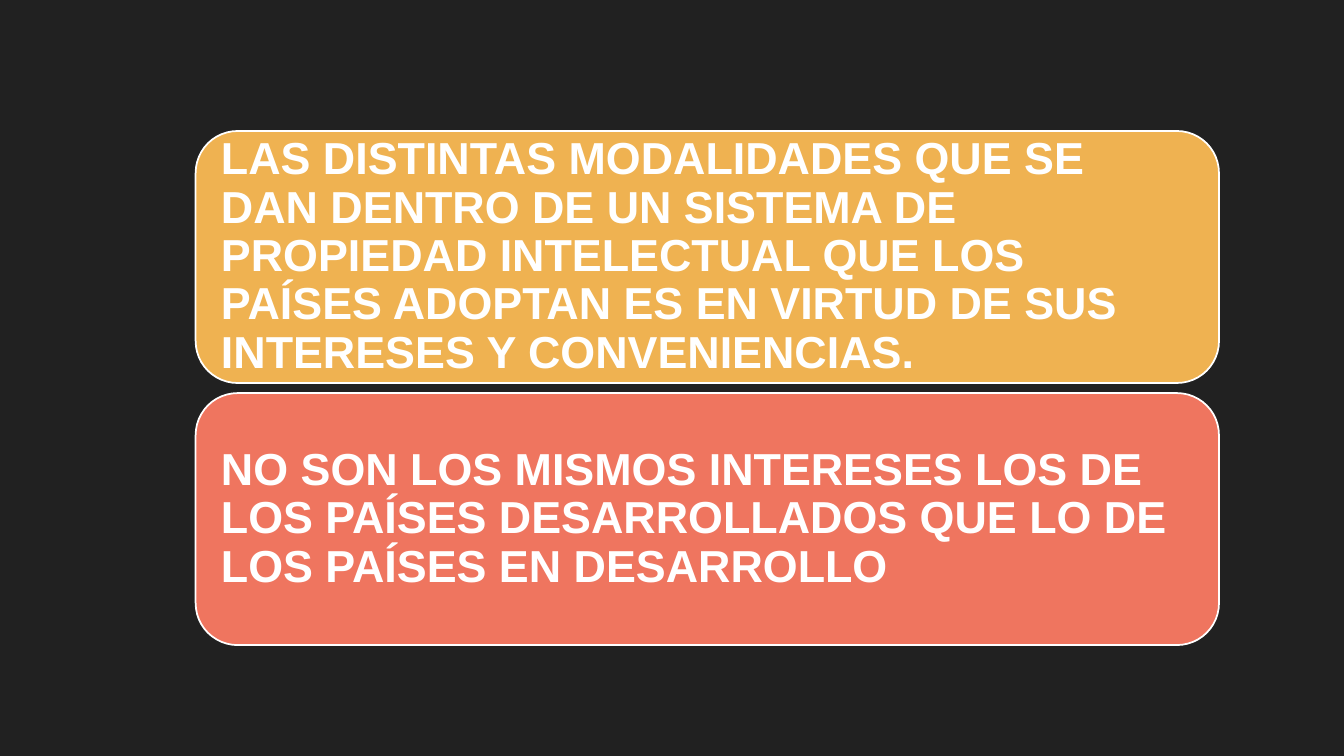
from pptx import Presentation
from pptx.dml.color import RGBColor
from pptx.enum.shapes import MSO_SHAPE
from pptx.enum.text import MSO_ANCHOR, PP_ALIGN
from pptx.util import Inches, Pt

ROUNDED = MSO_SHAPE.ROUNDED_RECTANGLE
MIDDLE = MSO_ANCHOR.MIDDLE
LEFT = PP_ALIGN.LEFT

BACKGROUND = "212121"
WHITE = "FFFFFF"
CARD_LEFT, CARD_TOP = 1.94, 1.3
CARD_WIDTH, CARD_HEIGHT = 10.15, 2.5
CARD_GAP = 0.1
CARD_INSET = Inches(0.13)

CARDS = [
    ("EFB251", "LAS DISTINTAS MODALIDADES QUE SE DAN DENTRO DE UN SISTEMA DE "
               "PROPIEDAD INTELECTUAL QUE LOS PAÍSES ADOPTAN ES EN VIRTUD DE "
               "SUS INTERESES Y CONVENIENCIAS."),
    ("EF755F", "NO SON LOS MISMOS INTERESES LOS DE LOS PAÍSES DESARROLLADOS "
               "QUE LO DE LOS PAÍSES EN DESARROLLO"),
]

FRAME_FORMAT = {
    "word_wrap": True,
    "vertical_anchor": MIDDLE,
    "margin_left": CARD_INSET,
    "margin_top": CARD_INSET,
    "margin_right": CARD_INSET,
    "margin_bottom": CARD_INSET,
}
PARAGRAPH_FORMAT = {"alignment": LEFT, "line_spacing": 0.9}
FONT_FORMAT = {"name": "Arial", "size": Pt(32), "bold": True}


def color(hex_string):
    return RGBColor.from_string(hex_string)


def apply_format(target, values):
    for name, value in values.items():
        setattr(target, name, value)


def set_background(slide, hex_string):
    fill = slide.background.fill
    fill.solid()
    fill.fore_color.rgb = color(hex_string)


def add_card(slide, top, fill_color, text):
    shape = slide.shapes.add_shape(
        ROUNDED, Inches(CARD_LEFT), Inches(top),
        Inches(CARD_WIDTH), Inches(CARD_HEIGHT))
    shape.shadow.inherit = False
    shape.fill.solid()
    shape.fill.fore_color.rgb = color(fill_color)
    shape.line.color.rgb = color(WHITE)
    shape.line.width = Pt(1.25)

    # Statement inside the card
    apply_format(shape.text_frame, FRAME_FORMAT)
    paragraph = shape.text_frame.paragraphs[0]
    apply_format(paragraph, PARAGRAPH_FORMAT)
    run = paragraph.add_run()
    run.text = text
    apply_format(run.font, FONT_FORMAT)
    run.font.color.rgb = color(WHITE)


def main():
    presentation = Presentation()
    presentation.slide_width = Inches(13.33)
    presentation.slide_height = Inches(7.5)
    slide = presentation.slides.add_slide(presentation.slide_layouts[6])
    set_background(slide, BACKGROUND)

    # Stacked statement cards
    for index, (fill_color, text) in enumerate(CARDS):
        top = CARD_TOP + index * (CARD_HEIGHT + CARD_GAP)
        add_card(slide, top, fill_color, text)

    presentation.save("out.pptx")


if __name__ == "__main__":
    main()
